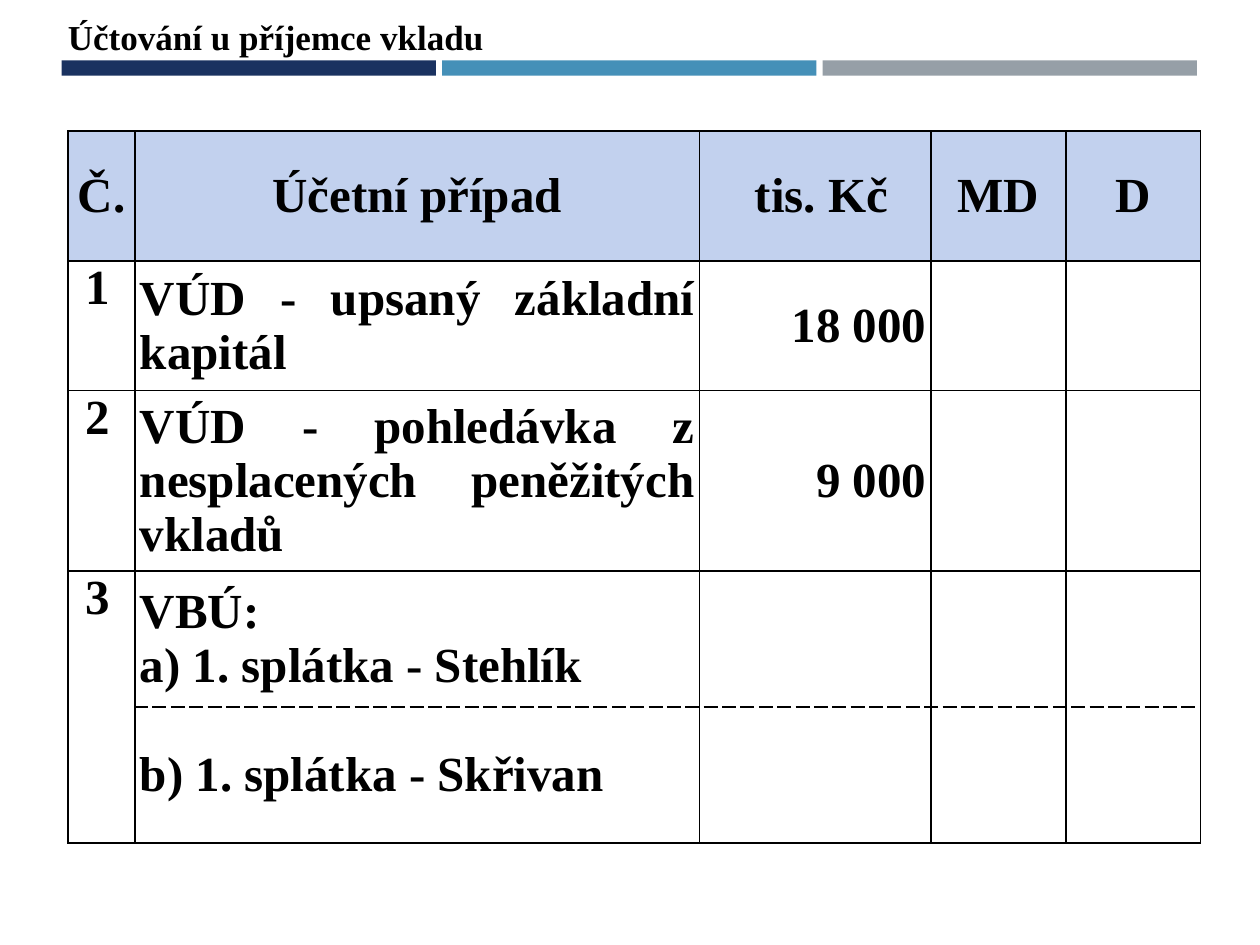
from lxml.etree import SubElement
from pptx import Presentation
from pptx.dml.color import RGBColor
from pptx.enum.shapes import MSO_SHAPE
from pptx.enum.text import MSO_ANCHOR, MSO_AUTO_SIZE, PP_ALIGN
from pptx.oxml.ns import qn
from pptx.util import Inches, Pt

BLACK = RGBColor(0x00, 0x00, 0x00)
NAVY = RGBColor(0x1A, 0x32, 0x60)
BLUE = RGBColor(0x45, 0x90, 0xB8)
GREY = RGBColor(0x96, 0x9F, 0xA7)
HEADER_FILL = RGBColor(0xC2, 0xD1, 0xEE)


def add_text(tf, text, size=28, align=PP_ALIGN.LEFT, font="Times New Roman", color=BLACK):
    """Fill a text frame with bold text, one paragraph per line."""
    for i, line in enumerate(text.split("\n")):
        p = tf.add_paragraph() if i else tf.paragraphs[0]
        p.alignment = align
        r = p.add_run()
        r.text = line
        r.font.name = font
        r.font.size = Pt(size)
        r.font.bold = True
        r.font.color.rgb = color


def set_borders(cell, dashed_side=None):
    """Draw 1 pt borders on all four sides; dashed_side is lnT or lnB."""
    tcPr = cell._tc.get_or_add_tcPr()
    for i, side in enumerate(("lnL", "lnR", "lnT", "lnB")):
        ln = tcPr.makeelement(qn(f"a:{side}"), {"w": str(Pt(1))})
        tcPr.insert(i, ln)
        fill = SubElement(ln, qn("a:solidFill"))
        SubElement(fill, qn("a:srgbClr"), val=str(BLACK))
        SubElement(ln, qn("a:prstDash"), val="dash" if side == dashed_side else "solid")


prs = Presentation()
prs.slide_width, prs.slide_height = Inches(10), Inches(7.5)
s = prs.slides.add_slide(prs.slide_layouts[6])

# Coloured bars under the title
for i, color in enumerate((NAVY, BLUE, GREY)):
    sp = s.shapes.add_shape(MSO_SHAPE.RECTANGLE, Inches(0.49 + i * 3.02), Inches(0.48),
                            Inches(2.97), Inches(0.12))
    sp.shadow.inherit = False
    sp.fill.solid()
    sp.fill.fore_color.rgb = color
    sp.line.fill.background()

# Title
title = s.shapes.add_textbox(Inches(0.44), Inches(0.07), Inches(3.53), Inches(0.44))
title.text_frame.word_wrap = False
title.text_frame.auto_size = MSO_AUTO_SIZE.SHAPE_TO_FIT_TEXT
add_text(title.text_frame, "Účtování u příjemce vkladu", size=20)

# Table of accounting entries
ROWS = [
    ("Č.", "Účetní případ", " tis. Kč", "MD", "D"),
    (" 1", "VÚD - upsaný základní kapitál", "18 000", "", ""),
    (" 2", "VÚD - pohledávka z nesplacených peněžitých vkladů", "9 000", "", ""),
    (" 3", "VBÚ:\na) 1. splátka - Stehlík", "", "", ""),
    ("", "b) 1. splátka - Skřivan", "", "", ""),
]
COL_WIDTHS = (0.53, 4.48, 1.84, 1.07, 1.07)
ROW_HEIGHTS = (1.03, 1.03, 1.43, 1.08, 1.08)
BODY_ALIGN = (PP_ALIGN.LEFT, PP_ALIGN.JUSTIFY, PP_ALIGN.RIGHT, PP_ALIGN.CENTER, PP_ALIGN.CENTER)
DASHED_SIDES = {3: "lnB", 4: "lnT"}

table = s.shapes.add_table(len(ROWS), len(COL_WIDTHS), Inches(0.54), Inches(1.04),
                           Inches(sum(COL_WIDTHS)), Inches(sum(ROW_HEIGHTS))).table
for col, width in zip(table.columns, COL_WIDTHS):
    col.width = Inches(width)
for row, height in zip(table.rows, ROW_HEIGHTS):
    row.height = Inches(height)
table.cell(3, 0).merge(table.cell(4, 0))

for i, row in enumerate(ROWS):
    for j, text in enumerate(row):
        cell = table.cell(i, j)
        is_header = i == 0
        cell.margin_left = cell.margin_right = Inches(0.04)
        cell.margin_top = cell.margin_bottom = 0
        is_number = j == 0 and not is_header
        cell.vertical_anchor = MSO_ANCHOR.TOP if is_number else MSO_ANCHOR.MIDDLE
        if is_header:
            cell.fill.solid()
            cell.fill.fore_color.rgb = HEADER_FILL
        else:
            cell.fill.background()
        set_borders(cell, DASHED_SIDES.get(i) if j else None)
        if text:
            add_text(cell.text_frame, text, align=PP_ALIGN.CENTER if is_header else BODY_ALIGN[j])

prs.save("out.pptx")
